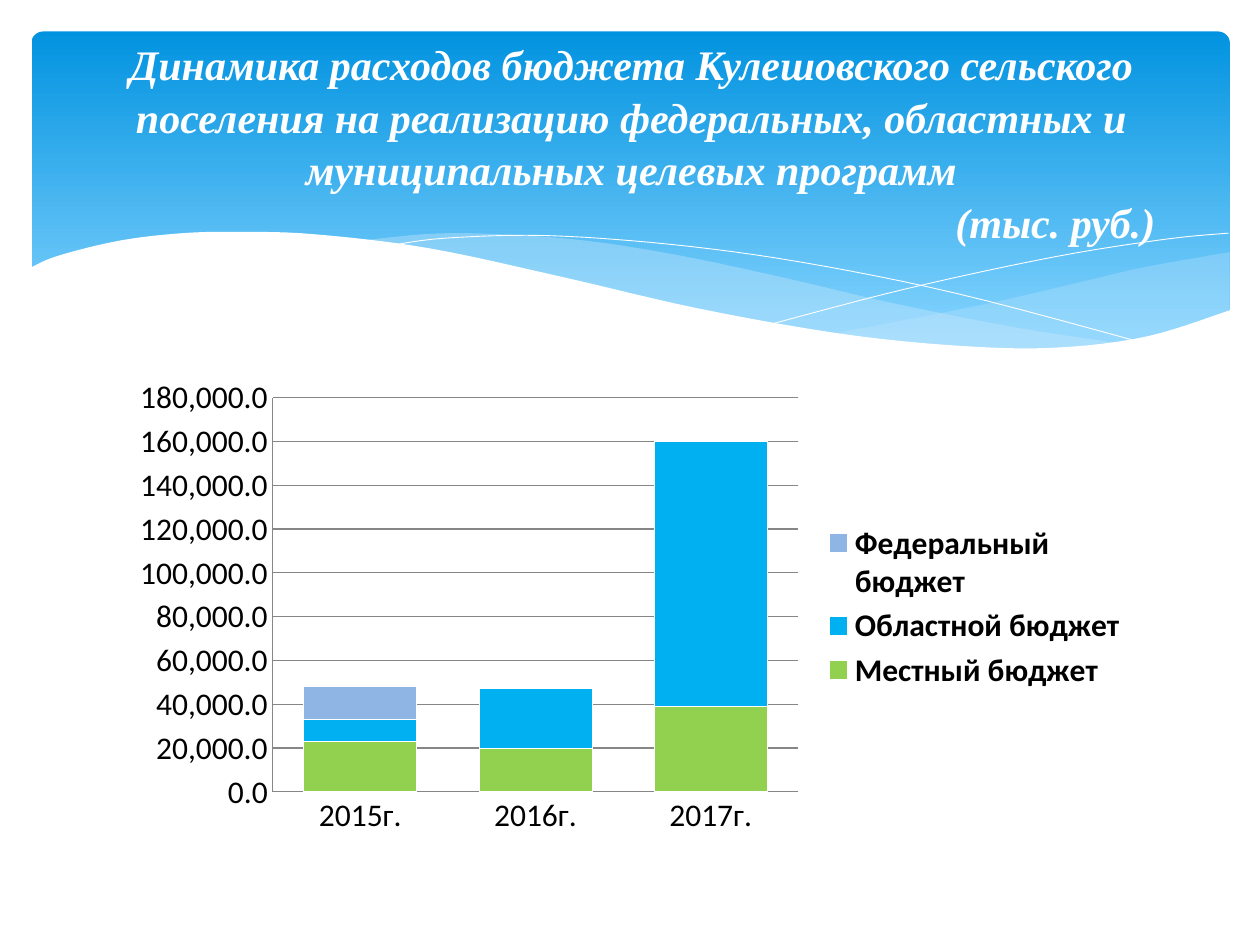
import pptx
import pptx.chart.data
import pptx.dml.color
import pptx.enum.chart
import pptx.enum.shapes
import pptx.enum.text
import pptx.oxml.ns
import pptx.oxml.xmlchemy
import pptx.util

Pt = pptx.util.Pt
qn = pptx.oxml.ns.qn

WHITE = "FFFFFF"
PALE_BLUE = "C6E7FC"
AXIS_GREY = "868686"
TITLE = (
    ("Динамика расходов бюджета Кулешовского сельского поселения на реализацию "
     "федеральных, областных и муниципальных целевых программ", "CENTER"),
    ("(тыс. руб.)", "RIGHT"),
)
YEARS = ("2015г.", "2016г.", "2017г.")
BUDGETS = (
    ("Местный бюджет", (23000, 20000, 39000), "92D050"),
    ("Областной бюджет", (10000, 27000, 121000), "00B0F0"),
    ("Федеральный бюджет", (15000, 0, 0), "8FB5E5"),
)

# Knots of the wave edges, in points
RIGHT_BAND_TOP = [(702.7, 144), (652.3, 153), (619.9, 160.6), (560.9, 174.2), (475.9, 190.8)]
RIGHT_BAND_BOTTOM = [(475.9, 190.8), (527, 197.3), (578.2, 200.2), (635.8, 197.3),
                     (673.2, 188.6), (702.7, 177.8)]
LONG_BAND_TOP = [(642.9, 196.6), (580.9, 187.2), (508.3, 172.8), (452.9, 159.8), (389.5, 146.2),
                 (334.8, 137.5), (287.3, 133.9), (247.7, 133.5), (205.9, 137.5)]
LONG_BAND_BOTTOM = [(205.9, 137.5), (260.6, 146.2), (323.3, 159.8), (407.5, 178.6),
                    (468, 190.1), (529.2, 198), (589, 200.2), (642.9, 196.6)]
FALLING_LINE = [(222.5, 140.4), (254.2, 136.1), (311.8, 134.6), (383.8, 139.7),
                (457.9, 149.8), (547.2, 167.8), (653, 195.8)]
RISING_LINE = [(441.4, 185), (518.4, 164.9), (601.9, 146.9), (665.3, 136.8), (702, 133.2)]
WHITE_WAVE = [(16.6, 153.4), (33.1, 146.2), (68.4, 137.5), (105.1, 133.2), (139, 132.5),
              (180, 133.9), (244.8, 141.8), (321.8, 158.4), (399.6, 176.4), (481, 190.8),
              (548, 197.6), (602.6, 198.7), (655.2, 192.3), (703.4, 177.1)]
WAVE_FLOOR = [(703.4, 236.9), (16.6, 236.9)]


def rgb(code):
    return pptx.dml.color.RGBColor.from_string(code)


def apply(target, **values):
    for name, value in values.items():
        setattr(target, name, value)


def new_element(tag, value=None):
    element = pptx.oxml.xmlchemy.OxmlElement(tag)
    if value is not None:
        element.set("val", str(value))
    return element


def smooth(knots, steps=6):
    """Return points on a Catmull-Rom curve through the knots."""
    ends = [knots[0], *knots, knots[-1]]
    points = [knots[0]]
    for a, b, c, d in zip(ends, ends[1:], ends[2:], ends[3:]):
        for i in range(1, steps + 1):
            t = i / steps
            points.append(tuple(
                (2 * q + (r - p) * t + (2 * p - 5 * q + 4 * r - s) * t ** 2
                 + (3 * q - p - 3 * r + s) * t ** 3) / 2
                for p, q, r, s in zip(a, b, c, d)))
    return points


def add_outline(slide, points, close):
    (x, y), *rest = [(Pt(px), Pt(py)) for px, py in points]
    builder = slide.shapes.build_freeform(x, y)
    builder.add_line_segments(rest, close=close)
    sp = builder.convert_to_shape()
    sp.shadow.inherit = False
    return sp


def add_band(slide, points, color, opacity=100):
    sp = add_outline(slide, points, True)
    sp.fill.solid()
    sp.fill.fore_color.rgb = rgb(color)
    sp.line.fill.background()
    if opacity < 100:
        clr = sp.element.spPr.find(".//" + qn("a:srgbClr"))
        clr.append(new_element("a:alpha", opacity * 1000))


def add_curve(slide, knots):
    sp = add_outline(slide, smooth(knots), False)
    sp.fill.background()
    sp.line.color.rgb = rgb(WHITE)
    sp.line.width = Pt(0.5)


def add_header(slide):
    sp = slide.shapes.add_shape(pptx.enum.shapes.MSO_SHAPE.ROUNDED_RECTANGLE,
                                Pt(18), Pt(18), Pt(684.7), Pt(194.4))
    sp.adjustments[0] = 0.034
    sp.shadow.inherit = False
    sp.line.fill.background()
    sp.fill.gradient()
    sp.fill.gradient_angle = 270
    stops = ((0, "0293E0"), (0.9, "83D3FE"))
    for stop, (position, color) in zip(sp.fill.gradient_stops, stops):
        stop.position = position
        stop.color.rgb = rgb(color)


def add_waves(slide):
    add_band(slide, smooth(RIGHT_BAND_TOP) + smooth(RIGHT_BAND_BOTTOM), PALE_BLUE, 29)
    add_band(slide, smooth(LONG_BAND_TOP) + smooth(LONG_BAND_BOTTOM), PALE_BLUE, 40)
    for knots in (FALLING_LINE, RISING_LINE):
        add_curve(slide, knots)
    add_band(slide, smooth(WHITE_WAVE) + WAVE_FLOOR, WHITE)


def set_plot_layout(chart, **fractions):
    """Fix the inner plot area as fractions of the chart frame."""
    area = chart.element.find(".//" + qn("c:plotArea"))
    layout = area.find(qn("c:layout"))
    if layout is None:
        layout = new_element("c:layout")
        area.insert(0, layout)
    manual = new_element("c:manualLayout")
    layout.append(manual)
    settings = {"layoutTarget": "inner", "xMode": "edge", "yMode": "edge", **fractions}
    for tag, value in settings.items():
        manual.append(new_element("c:" + tag, value))


def add_budget_chart(slide):
    data = pptx.chart.data.CategoryChartData()
    data.categories = YEARS
    for name, values, _ in BUDGETS:
        data.add_series(name, values)
    chart = slide.shapes.add_chart(pptx.enum.chart.XL_CHART_TYPE.COLUMN_STACKED,
                                   Pt(68.4), Pt(211), Pt(583.2), Pt(271.4), data).chart
    apply(chart.font, name="Calibri", size=Pt(18))
    chart.font.color.rgb = rgb("000000")
    chart.has_title = False
    chart.has_legend = True
    apply(chart.legend, position=pptx.enum.chart.XL_LEGEND_POSITION.RIGHT,
          include_in_layout=False)
    apply(chart.legend.font, bold=True, size=Pt(18), name="Calibri")
    plot = chart.plots[0]
    apply(plot, gap_width=55, overlap=100, vary_by_categories=False)
    for series, (_, _, color) in zip(plot.series, BUDGETS):
        series.format.fill.solid()
        series.format.fill.fore_color.rgb = rgb(color)
        series.format.line.color.rgb = rgb(WHITE)
    axis = chart.value_axis
    apply(axis, minimum_scale=0, maximum_scale=180000, major_unit=20000,
          has_major_gridlines=True)
    apply(axis.tick_labels, number_format="#,##0.0", number_format_is_linked=False)
    axis.major_gridlines.format.line.color.rgb = rgb(AXIS_GREY)
    for each in (axis, chart.category_axis):
        each.major_tick_mark = pptx.enum.chart.XL_TICK_MARK.NONE
        each.format.line.color.rgb = rgb(AXIS_GREY)
    set_plot_layout(chart, x=0.15, y=0.06, w=0.515, h=0.83)


def add_title(slide):
    sp = slide.shapes.title
    apply(sp, left=Pt(36.7), top=Pt(26), width=Pt(648), height=Pt(110))
    tf = sp.text_frame
    apply(tf, word_wrap=True, vertical_anchor=pptx.enum.text.MSO_ANCHOR.MIDDLE,
          auto_size=pptx.enum.text.MSO_AUTO_SIZE.NONE,
          margin_left=Pt(24.5), margin_right=Pt(24.5))
    for i, (text, align) in enumerate(TITLE):
        p = tf.add_paragraph() if i else tf.paragraphs[0]
        apply(p, alignment=pptx.enum.text.PP_ALIGN[align], line_spacing=1.04,
              space_before=Pt(0))
        r = p.add_run()
        r.text = text
        apply(r.font, name="Times New Roman", size=Pt(24), bold=True, italic=True)
        r.font.color.rgb = rgb(WHITE)
    # The title must lie in front of the header
    sp.element.getparent().append(sp.element)


def main():
    prs = pptx.Presentation()
    apply(prs, slide_width=Pt(720), slide_height=Pt(540))
    slide = prs.slides.add_slide(prs.slide_layouts[5])
    add_header(slide)
    add_waves(slide)
    add_budget_chart(slide)
    add_title(slide)
    prs.save("out.pptx")


if __name__ == "__main__":
    main()
